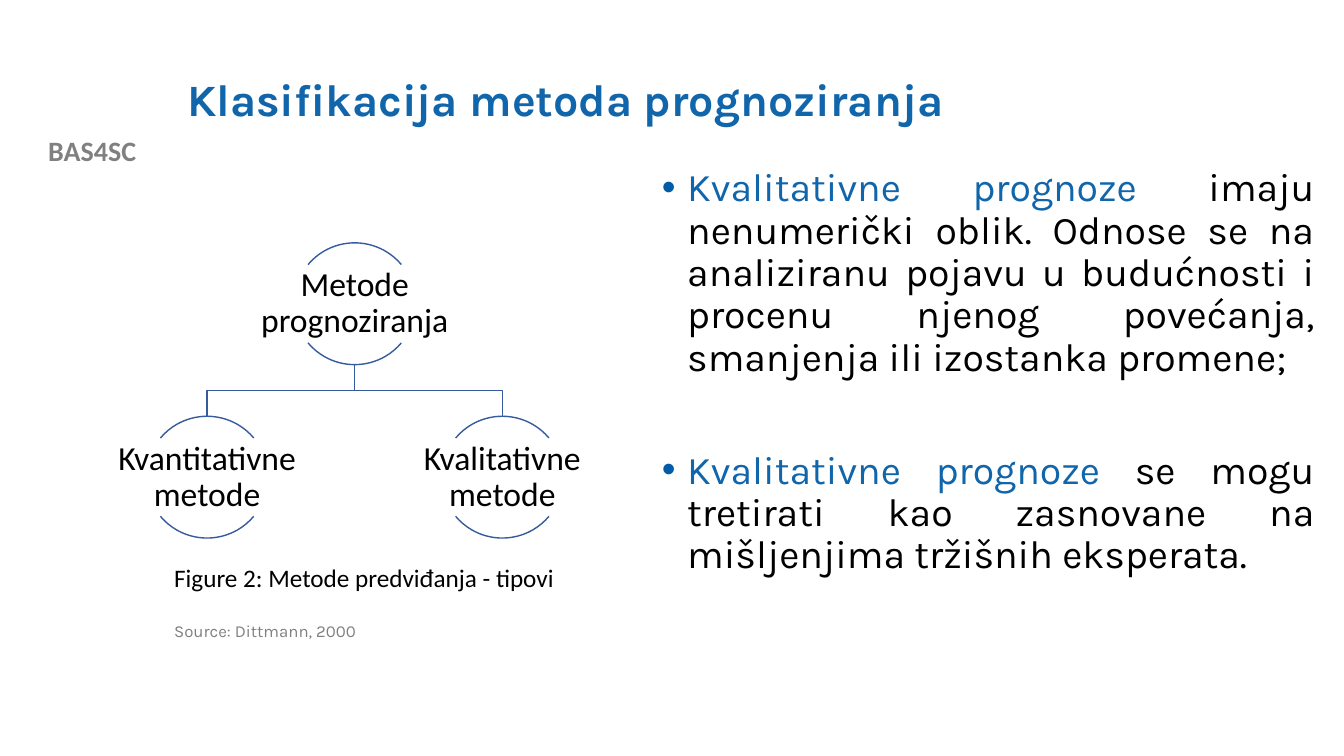
"""Build the slide on the classification of forecasting methods."""
from lxml import etree
from pptx import Presentation
from pptx import util as u
from pptx.dml.color import RGBColor
from pptx.enum import shapes, text
from pptx.oxml.ns import qn

BLUE = RGBColor(0x10, 0x65, 0xAB)
LINE_BLUE = RGBColor(0x36, 0x5B, 0x9D)
BLACK = RGBColor(0, 0, 0)
GREY = RGBColor(0x80, 0x80, 0x80)
SOURCE_GREY = RGBColor(0x7F, 0x7F, 0x7F)
BULLET_COLOUR = "015BA6"

presentation = Presentation()
presentation.slide_width = u.Cm(33.87)
presentation.slide_height = u.Cm(19.05)
slide = presentation.slides.add_slide(presentation.slide_layouts[6])


def add_text(box, runs, frame_format, paragraph_format, size, name, bold=False):
    """Add a text box whose runs are (wording, colour) pairs."""
    frame = slide.shapes.add_textbox(*map(u.Cm, box)).text_frame
    frame.word_wrap = True
    for key, value in frame_format.items():
        setattr(frame, key, value)
    fill_paragraph(frame.paragraphs[0], runs, paragraph_format, size, name, bold)
    return frame


def fill_paragraph(paragraph, runs, paragraph_format, size, name, bold=False):
    """Format a paragraph and add its coloured runs."""
    for key, value in paragraph_format.items():
        setattr(paragraph, key, value)
    for wording, colour in runs:
        run = paragraph.add_run()
        run.text = wording
        for key, value in {"size": u.Pt(size), "name": name, "bold": bold}.items():
            setattr(run.font, key, value)
        run.font.color.rgb = colour


CENTRED = {"alignment": text.PP_ALIGN.CENTER}
TIGHT = {"line_spacing": 0.9}
MIDDLE = {"vertical_anchor": text.MSO_ANCHOR.MIDDLE}

add_text((0, 3.25, 4.65, 1.12), [("BAS4SC", GREY)], {}, CENTRED, 20, "Calibri", True)
add_text((4.47, 1.02, 27.08, 3.1), [("Klasifikacija metoda prognoziranja", BLUE)],
         MIDDLE, TIGHT, 32, "Karla", True)

bullets = [
    ("imaju nenumerički oblik. Odnose se na analiziranu pojavu u budućnosti i "
     "procenu njenog povećanja, smanjenja ili izostanka promene;", 0),
    ("se mogu tretirati kao zasnovane na mišljenjima tržišnih eksperata.", 50.4),
]
body = slide.shapes.add_textbox(u.Cm(16.43), u.Cm(4.11), u.Cm(16.94), u.Cm(12.09)).text_frame
body.word_wrap = True
for index, (wording, space_before) in enumerate(bullets):
    paragraph = body.add_paragraph() if index else body.paragraphs[0]
    properties = paragraph._p.get_or_add_pPr()
    properties.set("marL", str(u.Cm(0.64)))
    properties.set("indent", str(u.Cm(-0.64)))
    bullet_colour = etree.SubElement(properties, qn("a:buClr"))
    etree.SubElement(bullet_colour, qn("a:srgbClr"), val=BULLET_COLOUR)
    etree.SubElement(properties, qn("a:buFont"), typeface="Arial")
    etree.SubElement(properties, qn("a:buChar"), char="•")
    justified = {**TIGHT, "alignment": text.PP_ALIGN.JUSTIFY, "space_before": u.Pt(space_before)}
    fill_paragraph(paragraph, [("Kvalitativne prognoze ", BLUE), (wording, BLACK)],
                   justified, 28, "Karla")

DIAMETER = 3.07
ROOT_X, ROOT_TOP = 8.94, 6.12
CHILD_OFFSET, CHILD_TOP = 3.72, 10.49
root_bottom = ROOT_TOP + DIAMETER
branch_y = (root_bottom + CHILD_TOP) / 2
outlines = []

for child_x in (ROOT_X + CHILD_OFFSET, ROOT_X - CHILD_OFFSET):
    builder = slide.shapes.build_freeform(u.Cm(ROOT_X), u.Cm(root_bottom))
    corners = [(ROOT_X, branch_y), (child_x, branch_y), (child_x, CHILD_TOP)]
    builder.add_line_segments([(u.Cm(x), u.Cm(y)) for x, y in corners], close=False)
    outlines.append(builder.convert_to_shape())

nodes = [
    ("Metode prognoziranja", ROOT_X, ROOT_TOP),
    ("Kvantitativne metode", ROOT_X - CHILD_OFFSET, CHILD_TOP),
    ("Kvalitativne metode", ROOT_X + CHILD_OFFSET, CHILD_TOP),
]
sides = ("left", "top", "right", "bottom")
node_frame = {**MIDDLE, **{f"margin_{side}": u.Cm(0.05) for side in sides}}
for label, centre_x, top in nodes:
    for start, end in ((132, 192), (24, 84)):
        arc = slide.shapes.add_shape(
            shapes.MSO_SHAPE.ARC, u.Cm(centre_x - DIAMETER / 2), u.Cm(top),
            u.Cm(DIAMETER), u.Cm(DIAMETER))
        arc.adjustments[0], arc.adjustments[1] = start, end
        outlines.append(arc)
    add_text((centre_x - 3.07, top + 0.56, 6.14, 1.96), [(label, BLACK)],
             node_frame, {**CENTRED, **TIGHT}, 24, "Calibri")

for outline in outlines:
    outline.shadow.inherit = False
    outline.fill.background()
    outline.line.color.rgb = LINE_BLUE
    outline.line.width = u.Pt(1)

add_text((4.14, 15.57, 16.94, 0.71), [("Source: Dittmann, 2000", SOURCE_GREY)],
         {}, TIGHT, 12, "Karla")
add_text((4.14, 14.05, 11.38, 1.02), [("Figure 2: Metode predviđanja - tipovi", BLACK)],
         {}, {}, 18, "Calibri")

presentation.save("out.pptx")
